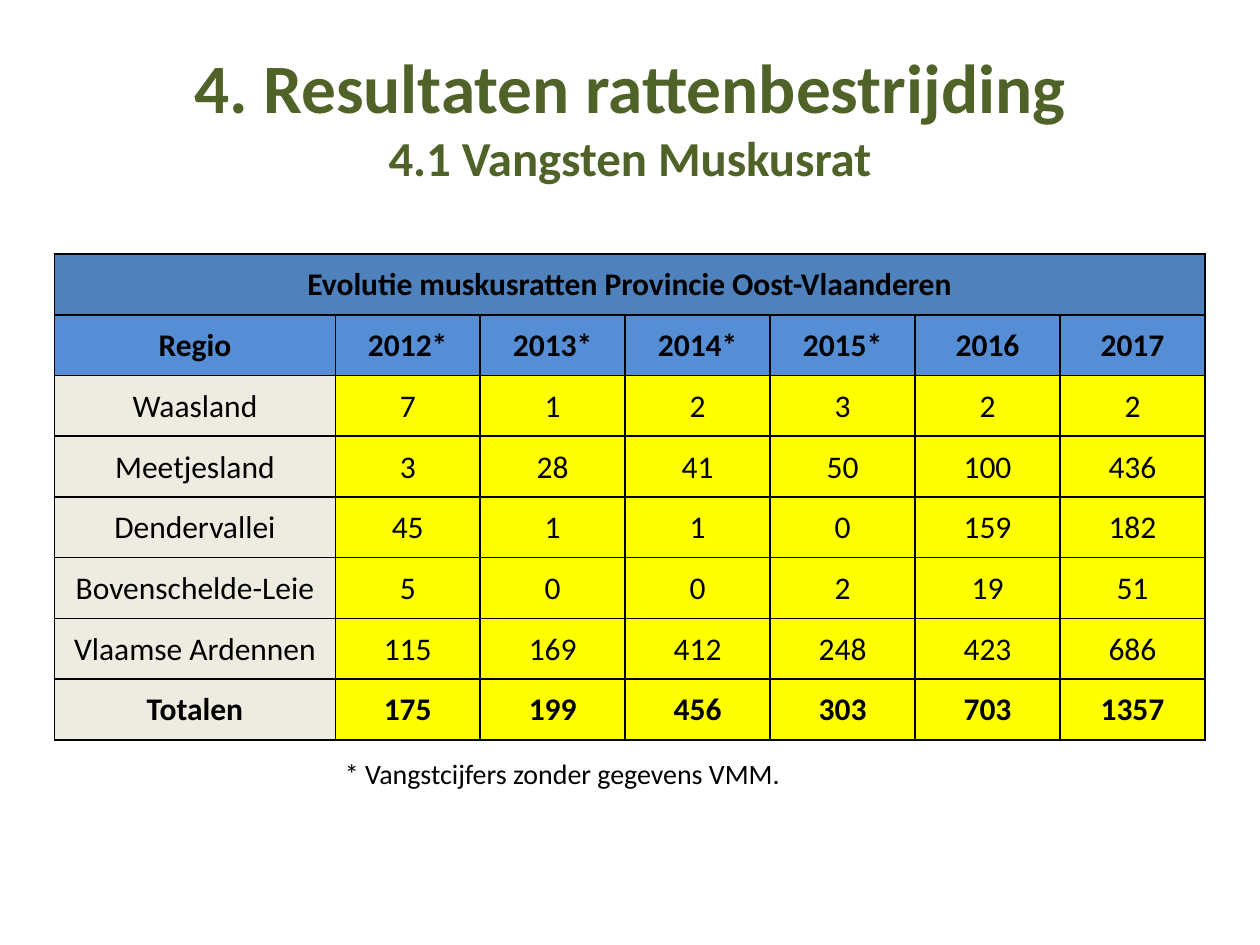
from lxml import etree
from pptx import Presentation
from pptx.dml.color import RGBColor
from pptx.enum.text import MSO_ANCHOR, MSO_AUTO_SIZE, PP_ALIGN
from pptx.oxml.ns import qn
from pptx.util import Pt

CENTER = PP_ALIGN.CENTER
MIDDLE = MSO_ANCHOR.MIDDLE
NO_AUTOFIT = MSO_AUTO_SIZE.NONE
FIT_SHAPE = MSO_AUTO_SIZE.SHAPE_TO_FIT_TEXT

FONT = "Calibri"
GREEN = RGBColor(0x4F, 0x62, 0x28)
BLACK = RGBColor(0x00, 0x00, 0x00)
DARK_BLUE = RGBColor(0x4F, 0x81, 0xBD)
BLUE = RGBColor(0x55, 0x8E, 0xD5)
BEIGE = RGBColor(0xEE, 0xEC, 0xE1)
YELLOW = RGBColor(0xFF, 0xFF, 0x00)

ROWS = [
    ["Evolutie muskusratten Provincie Oost-Vlaanderen"] + [""] * 6,
    ["Regio", "2012*", "2013*", "2014*", "2015*", "2016", "2017"],
    ["Waasland", 7, 1, 2, 3, 2, 2],
    ["Meetjesland", 3, 28, 41, 50, 100, 436],
    ["Dendervallei", 45, 1, 1, 0, 159, 182],
    ["Bovenschelde-Leie", 5, 0, 0, 2, 19, 51],
    ["Vlaamse Ardennen", 115, 169, 412, 248, 423, 686],
    ["Totalen", 175, 199, 456, 303, 703, 1357],
]
REGION_WIDTH, YEAR_WIDTH, ROW_HEIGHT = 160.4, 82.85, 34.7


def style_font(font, size, color, bold=False):
    font.name = FONT
    font.size = Pt(size)
    font.bold = bold
    font.color.rgb = color


def add_borders(cell):
    properties = cell._tc.get_or_add_tcPr()
    for position, side in enumerate(("a:lnL", "a:lnR", "a:lnT", "a:lnB")):
        line = etree.Element(qn(side), w=str(Pt(1)))
        fill = etree.SubElement(line, qn("a:solidFill"))
        etree.SubElement(fill, qn("a:srgbClr"), val=str(BLACK))
        properties.insert(position, line)


presentation = Presentation()
presentation.slide_width = Pt(720)
presentation.slide_height = Pt(540)
slide = presentation.slides.add_slide(presentation.slide_layouts[5])

# Title and subtitle
title = slide.shapes.title
title.left, title.top, title.width, title.height = Pt(36), Pt(21), Pt(648), Pt(90)
title.text_frame.auto_size = NO_AUTOFIT
title.text_frame.vertical_anchor = MIDDLE
paragraph = title.text_frame.paragraphs[0]
paragraph.alignment = CENTER
heading = paragraph.add_run()
heading.text = "4. Resultaten rattenbestrijding"
style_font(heading.font, 39.6, GREEN, True)
paragraph.add_line_break()
subheading = paragraph.add_run()
subheading.text = "4.1 Vangsten Muskusrat"
style_font(subheading.font, 27.9, GREEN, True)

# Table of catches by region and year
column_count = len(ROWS[0])
table = slide.shapes.add_table(
    len(ROWS), column_count, Pt(31.2), Pt(145.2),
    Pt(REGION_WIDTH + 6 * YEAR_WIDTH), Pt(len(ROWS) * ROW_HEIGHT)).table
for index, column in enumerate(table.columns):
    column.width = Pt(YEAR_WIDTH if index else REGION_WIDTH)
for row in table.rows:
    row.height = Pt(ROW_HEIGHT)
table.cell(0, 0).merge(table.cell(0, column_count - 1))

for row_index, values in enumerate(ROWS):
    bold = row_index < 2 or row_index == len(ROWS) - 1
    for column_index, value in enumerate(values):
        cell = table.cell(row_index, column_index)
        if row_index < 2:
            color = BLUE if row_index else DARK_BLUE
        else:
            color = YELLOW if column_index else BEIGE
        cell.fill.solid()
        cell.fill.fore_color.rgb = color
        add_borders(cell)
        cell.margin_left = cell.margin_right = cell.margin_top = Pt(0.7)
        cell.margin_bottom = 0
        cell.vertical_anchor = MIDDLE
        paragraph = cell.text_frame.paragraphs[0]
        if value != "":
            paragraph.text = str(value)
        paragraph.alignment = CENTER
        style_font(paragraph.font, 18, BLACK, bold)

# Footnote
footnote = slide.shapes.add_textbox(Pt(190), Pt(428.5), Pt(499), Pt(26.6))
footnote.text_frame.word_wrap = True
footnote.text_frame.auto_size = FIT_SHAPE
paragraph = footnote.text_frame.paragraphs[0]
paragraph.text = "* Vangstcijfers zonder gegevens VMM."
style_font(paragraph.font, 16, BLACK)

presentation.save("out.pptx")
